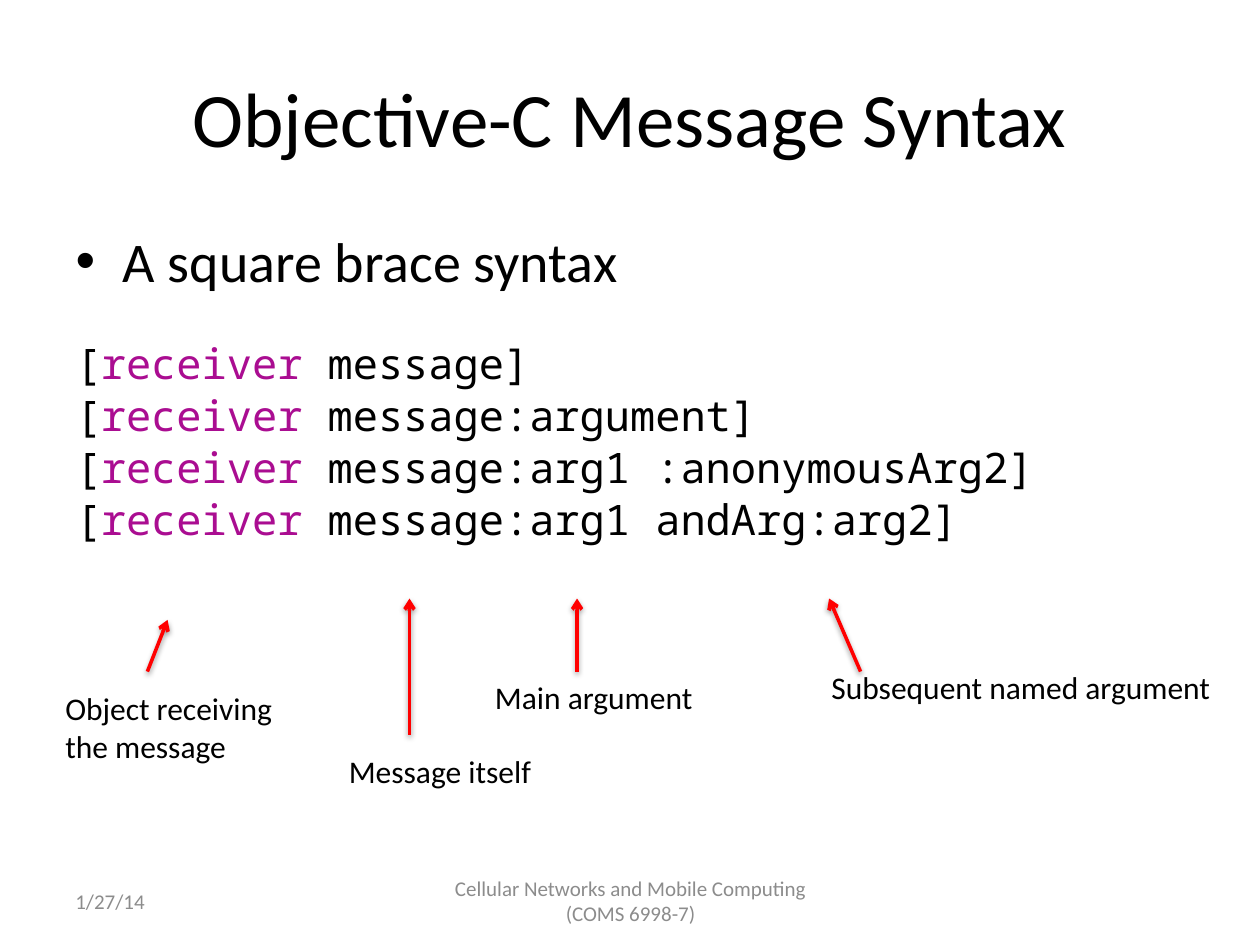
from lxml.etree import SubElement
from pptx import Presentation
from pptx.dml.color import RGBColor
from pptx.enum.shapes import MSO_CONNECTOR
from pptx.enum.text import MSO_ANCHOR, MSO_AUTO_SIZE, PP_ALIGN
from pptx.oxml.ns import qn
from pptx.util import Inches, Pt

# Content
COLORS = {"text": "000000", "receiver": "AA0D91", "arrow": "FF0000", "footer": "8C8C8C"}
SANS, MONO = "Calibri", "Noto Sans Mono"
TITLE = "Objective-C Message Syntax"
BULLET = "A square brace syntax"
MESSAGES = ["message]", "message:argument]", "message:arg1 :anonymousArg2]",
            "message:arg1 andArg:arg2]"]
# Label lines, label box, arrow start, arrow end
CALLOUTS = [
    (["Object receiving", "the message"], (0.42, 5.42, 1.86, 0.71), (1.17, 5.33), (1.33, 4.92)),
    (["Main argument"], (3.83, 5.33, 1.79, 0.4), (4.58, 5.33), (4.58, 4.75)),
    (["Subsequent named argument"], (6.5, 5.25, 3.25, 0.4), (6.83, 5.33), (6.58, 4.75)),
    (["Message itself"], (2.67, 5.92, 1.67, 0.4), (3.25, 5.83), (3.25, 4.75)),
]
FOOTERS = [
    ("1/27/14", (0.5, 6.95, 2.33, 0.4), PP_ALIGN.LEFT),
    ("Cellular Networks and Mobile Computing (COMS 6998-7)", (3.42, 6.95, 3.17, 0.4),
     PP_ALIGN.CENTER),
]


def place(sp, box):
    sp.left, sp.top, sp.width, sp.height = map(Inches, box)


def add_run(p, text, size, font=SANS, color="text"):
    r = p.add_run()
    r.text = text
    r.font.size = Pt(size)
    r.font.name = font
    r.font.color.rgb = RGBColor.from_string(COLORS[color])


def add_text(s, lines, box, size, color="text", align=PP_ALIGN.LEFT):
    tf = s.shapes.add_textbox(*map(Inches, box)).text_frame
    for i, line in enumerate(lines):
        p = tf.paragraphs[0] if i == 0 else tf.add_paragraph()
        p.alignment = align
        add_run(p, line, size, color=color)
    return tf


def add_arrow(s, start, end):
    cx = s.shapes.add_connector(MSO_CONNECTOR.STRAIGHT, *map(Inches, start + end))
    cx.line.color.rgb = RGBColor.from_string(COLORS["arrow"])
    cx.line.width = Pt(2)
    SubElement(cx.line._get_or_add_ln(), qn("a:tailEnd"), type="arrow")
    # Soft shadow straight below the line
    effects = SubElement(cx._element.spPr, qn("a:effectLst"))
    shadow = SubElement(effects, qn("a:outerShdw"), blurRad="40000", dist="20000",
                        dir="5400000", rotWithShape="0")
    black = SubElement(shadow, qn("a:srgbClr"), val="000000")
    SubElement(black, qn("a:alpha"), val="38000")


prs = Presentation()
prs.slide_width, prs.slide_height = Inches(10), Inches(7.5)
s = prs.slides.add_slide(prs.slide_layouts[1])

# Title
title = s.shapes.title
place(title, (0.5, 0.3, 9, 1.25))
title.text_frame.vertical_anchor = MSO_ANCHOR.MIDDLE
p = title.text_frame.paragraphs[0]
p.alignment = PP_ALIGN.CENTER
add_run(p, TITLE, 44)

# Bullet and code lines
body = s.placeholders[1]
place(body, (0.5, 1.75, 9, 4.95))
tf = body.text_frame
p = tf.paragraphs[0]
p.space_before = Pt(0)
add_run(p, BULLET, 32)
for i, message in enumerate(MESSAGES):
    p = tf.add_paragraph()
    pPr = p._p.get_or_add_pPr()
    pPr.set("marL", "0")
    pPr.set("indent", "0")
    SubElement(pPr, qn("a:buNone"))
    p.space_before = Pt(25 if i == 0 else 0.8)
    add_run(p, "[", 24, MONO)
    add_run(p, "receiver ", 24, MONO, "receiver")
    add_run(p, message, 24, MONO)

# Labels with arrows
for lines, box, start, end in CALLOUTS:
    tf = add_text(s, lines, box, 18)
    tf.word_wrap = False
    tf.auto_size = MSO_AUTO_SIZE.SHAPE_TO_FIT_TEXT
    add_arrow(s, start, end)

# Date and footer
for text, box, align in FOOTERS:
    tf = add_text(s, [text], box, 12, "footer", align)
    tf.word_wrap = True
    tf.vertical_anchor = MSO_ANCHOR.MIDDLE

prs.save("out.pptx")
